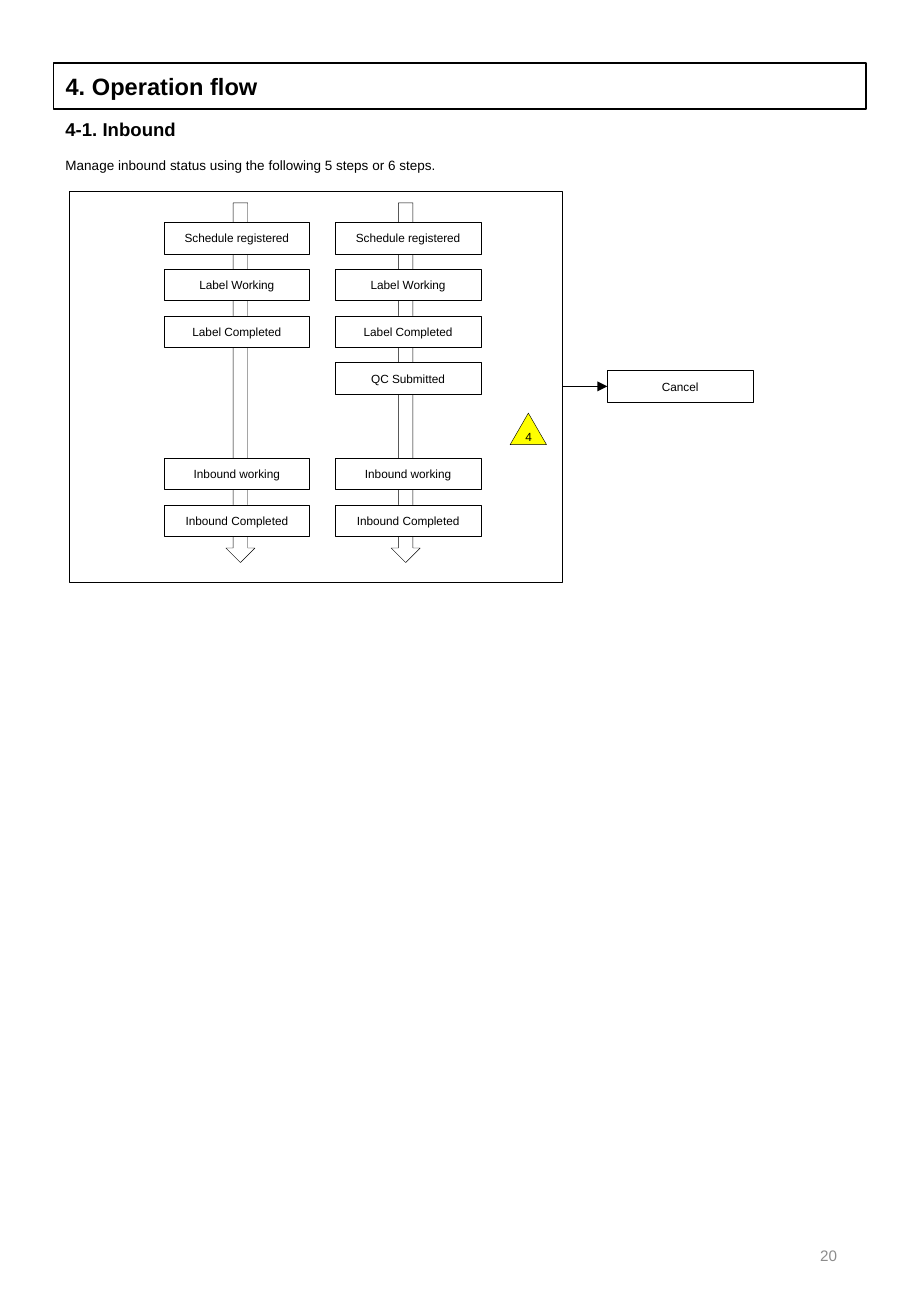
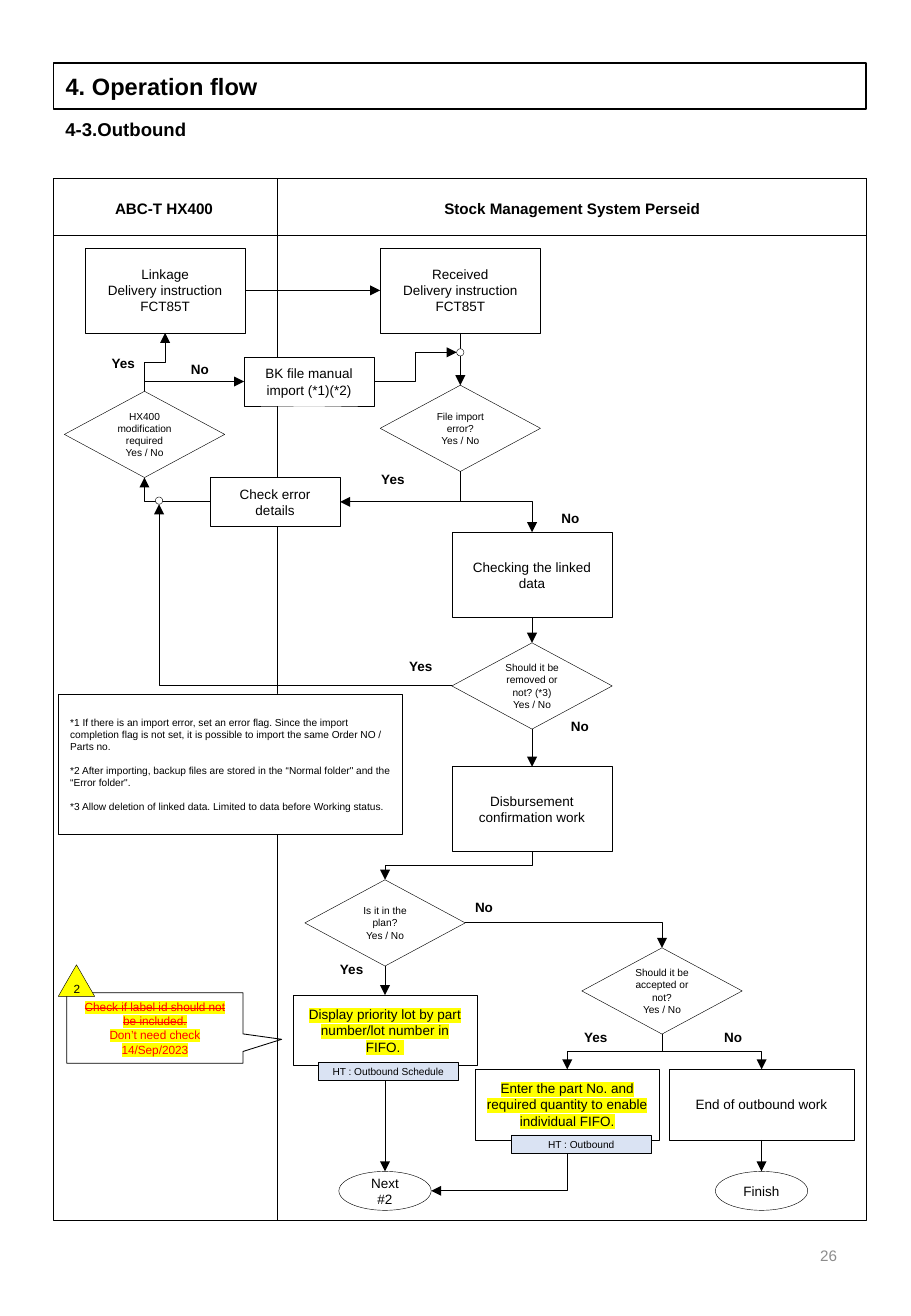
import lxml.etree
import pptx
import pptx.dml.color
import pptx.enum.shapes
import pptx.enum.text
import pptx.oxml.ns
import pptx.util

Inches = pptx.util.Inches
Pt = pptx.util.Pt
qn = pptx.oxml.ns.qn
KIND = pptx.enum.shapes.MSO_SHAPE
LINE = pptx.enum.shapes.MSO_CONNECTOR
ALIGN = pptx.enum.text.PP_ALIGN
ANCHOR = pptx.enum.text.MSO_ANCHOR

# Shared look
FONT = "Arial"
BLACK, WHITE, GREY, RED = "000000", "FFFFFF", "8C8C8C", "FF0000"
YELLOW, PALE_BLUE = "FFFF00", "DAE3F3"
LEFT, WIDTH = 0.44, 6.69
SIDES = ["top", "left", "bottom", "right"]


def colour(code):
    return pptx.dml.color.RGBColor.from_string(code)


def write(shape, text, size, color=BLACK, bold=False, align=ALIGN.CENTER,
          anchor=ANCHOR.MIDDLE, gap=0, highlight=None, struck=()):
    """Fill a shape with one paragraph per line of text."""
    frame = shape.text_frame
    frame.auto_size = pptx.enum.text.MSO_AUTO_SIZE.NONE
    frame.word_wrap = True
    frame.vertical_anchor = anchor
    lines = text.split("\n")
    for index, line in enumerate(lines):
        para = frame.add_paragraph() if index else frame.paragraphs[0]
        para.alignment = align
        para.space_after = Pt(gap if index < len(lines) - 1 else 0)
        span = para.add_run()
        span.text = line
        for name, value in {"name": FONT, "size": Pt(size), "bold": bold}.items():
            setattr(span.font, name, value)
        span.font.color.rgb = colour(color)
        properties = span.font._element
        if index in struck:
            properties.set("strike", "sngStrike")
        if highlight:
            mark = lxml.etree.Element(qn("a:highlight"))
            lxml.etree.SubElement(mark, qn("a:srgbClr"), val=highlight)
            properties.find(qn("a:solidFill")).addnext(mark)


def outline(shape, width):
    shape.line.color.rgb = colour(BLACK)
    shape.line.width = Pt(width)


def add_box(page, place, text="", size=8, kind=KIND.RECTANGLE, fill=None,
            width=0.25, **style):
    box = page.shapes.add_shape(kind, *map(Inches, place))
    box.shadow.inherit = False
    if fill:
        box.fill.solid()
        box.fill.fore_color.rgb = colour(fill)
    else:
        box.fill.background()
    outline(box, width)
    if text:
        write(box, text, size, **style)
    return box


def add_label(page, place, text, size=8, **style):
    write(page.shapes.add_textbox(*map(Inches, place)), text, size, **style)


def add_decision(page, left, top, text):
    return add_box(page, (left, top, 1.32, 0.71), text, 6, KIND.FLOWCHART_DECISION)


def add_marker(page, left, top, number):
    add_box(page, (left, top, 0.3, 0.26), number, 7, KIND.ISOSCELES_TRIANGLE, YELLOW)


def finish_line(line, arrow=True):
    outline(line, 0.5)
    properties = line._element.spPr
    if arrow:
        lxml.etree.SubElement(properties.find(qn("a:ln")), qn("a:tailEnd"), type="triangle")
    lxml.etree.SubElement(properties, qn("a:effectLst"))


def side_point(shape, side):
    across, down = {"top": (1, 0), "left": (0, 1), "bottom": (1, 2), "right": (2, 1)}[side]
    return shape.left + shape.width * across // 2, shape.top + shape.height * down // 2


def link(page, start, start_side, end, end_side):
    """Join two shapes with an arrow, straight where the ends are level."""
    x1, y1 = side_point(start, start_side)
    x2, y2 = side_point(end, end_side)
    straight = min(abs(x2 - x1), abs(y2 - y1)) < Inches(0.02)
    line = page.shapes.add_connector(LINE.STRAIGHT if straight else LINE.ELBOW, x1, y1, x2, y2)
    line.begin_connect(start, SIDES.index(start_side))
    line.end_connect(end, SIDES.index(end_side))
    # An ellipse has eight connection sites, so its sides count double
    if end.auto_shape_type == KIND.OVAL:
        joint = line._element.find(".//" + qn("a:endCxn"))
        joint.set("idx", str(2 * SIDES.index(end_side)))
    if not straight:
        vertical = [side in ("top", "bottom") for side in (start_side, end_side)]
        if vertical[0] != vertical[1]:
            line._element.spPr.find(qn("a:prstGeom")).set("prst", "bentConnector2")
        if vertical[0]:
            # Leaving vertically means a quarter turn about the centre
            long, wide = abs(y2 - y1), abs(x2 - x1)
            place = {"left": (x1 + x2 - long) // 2, "top": (y1 + y2 - wide) // 2,
                     "width": long, "height": wide}
            for name, value in place.items():
                setattr(line, name, value)
            turn = {"rot": "5400000", "flipH": str(int(y2 < y1)), "flipV": str(int(x2 > x1))}
            for name, value in turn.items():
                line._element.spPr.find(qn("a:xfrm")).set(name, value)
    finish_line(line)


def add_page(deck, heading, number):
    page = deck.slides.add_slide(deck.slide_layouts[5])
    title = page.shapes.title
    place = {"left": LEFT, "top": 0.52, "width": WIDTH, "height": 0.38}
    for name, value in place.items():
        setattr(title, name, Inches(value))
    outline(title, 1)
    write(title, "4. Operation flow", 14, bold=True, align=ALIGN.LEFT)
    add_label(page, (LEFT, 0.92, WIDTH, 0.29), heading, 11, bold=True,
              align=ALIGN.LEFT, anchor=ANCHOR.TOP)
    add_label(page, (5.3, 10.04, 1.69, 0.58), number, 9, color=GREY, align=ALIGN.RIGHT)
    return page


def build_inbound(deck):
    page = add_page(deck, "4-1. Inbound", "20")
    add_label(page, (LEFT, 1.24, WIDTH, 0.24),
              "Manage inbound status using the following 5 steps or 6 steps.",
              align=ALIGN.LEFT, anchor=ANCHOR.TOP)
    frame = add_box(page, (0.57, 1.57, 4.06, 3.22), fill=WHITE)

    # Two status columns, the second with a quality check
    early = ["Schedule registered", "Label Working", "Label Completed"]
    late = ["Inbound working", "Inbound Completed"]
    columns = [(1.35, 1.86, early), (2.76, 3.22, early + ["QC Submitted"])]
    for left, arrow_left, first_steps in columns:
        add_box(page, (arrow_left, 1.67, 0.24, 2.96), kind=KIND.DOWN_ARROW, fill=WHITE)
        for top, steps in ((1.83, first_steps), (3.77, late)):
            for index, step in enumerate(steps):
                add_box(page, (left, top + 0.385 * index, 1.2, 0.26), step, 7, fill=WHITE)

    cancel = add_box(page, (5, 3.05, 1.2, 0.26), "Cancel", 7)
    link(page, frame, "right", cancel, "left")
    add_marker(page, 4.2, 3.4, "4")


def build_outbound(deck):
    page = add_page(deck, "4-3.Outbound", "26")

    # Swimlanes
    top, bottom, divide = 1.47, 10.04, 2.28
    for height in (bottom - top, 0.47):
        add_box(page, (LEFT, top, WIDTH, height))
    add_label(page, (0.43, 1.48, 1.84, 0.47), "ABC-T HX400", 9, bold=True)
    add_label(page, (2.29, 1.48, 4.84, 0.47), "Stock Management System Perseid", 9, bold=True)
    divider = page.shapes.add_connector(
        LINE.STRAIGHT, *map(Inches, (divide, top, divide, bottom)))
    finish_line(divider, arrow=False)

    # Steps
    linkage = add_box(page, (0.7, 2.04, 1.32, 0.7), "Linkage\nDelivery instruction\nFCT85T")
    received = add_box(page, (3.13, 2.04, 1.32, 0.7), "Received\nDelivery instruction\nFCT85T")
    manual = add_box(page, (2.01, 2.94, 1.07, 0.4), "BK file manual import (*1)(*2)", fill=WHITE)
    details = add_box(page, (1.73, 3.93, 1.07, 0.4), "Check error details", fill=WHITE)
    checking = add_box(page, (3.72, 4.38, 1.32, 0.7), "Checking the linked data")
    disburse = add_box(page, (3.72, 6.31, 1.32, 0.7), "Disbursement confirmation work")
    display = add_box(page, (2.41, 8.19, 1.52, 0.58),
                      "Display priority lot by part number/lot number in FIFO. ", highlight=YELLOW)
    enter = add_box(page, (3.91, 8.8, 1.52, 0.58),
                    "Enter the part No. and required quantity to enable individual FIFO.",
                    highlight=YELLOW)
    end_work = add_box(page, (5.51, 8.8, 1.52, 0.58), "End of outbound work")
    following = add_box(page, (2.79, 9.64, 0.76, 0.32), "Next #2", kind=KIND.OVAL)
    finish = add_box(page, (5.89, 9.64, 0.76, 0.32), "Finish", kind=KIND.OVAL)

    # Decisions
    modify = add_decision(page, 0.53, 3.22, "HX400 modification required\nYes / No")
    import_error = add_decision(page, 3.13, 3.17, "File import error?\nYes / No")
    remove = add_decision(page, 3.72, 5.29, "Should it be removed or not? (*3)\nYes / No")
    plan = add_decision(page, 2.51, 7.24, "Is it in the plan?\nYes / No")
    accept = add_decision(page, 4.79, 7.8, "Should it be accepted or not?\nYes / No")

    # Arrows, with the small joints where two of them meet
    link(page, received, "bottom", import_error, "top")
    link(page, details, "left", modify, "bottom")
    import_joint, error_joint = [
        add_box(page, (left, joint_top, 0.06, 0.06), kind=KIND.OVAL, fill=WHITE)
        for left, joint_top in ((3.76, 2.87), (1.28, 4.09))]
    for ends in (
        (linkage, "right", received, "left"),
        (import_error, "bottom", details, "right"),
        (import_error, "bottom", checking, "top"),
        (modify, "top", manual, "left"),
        (modify, "top", linkage, "bottom"),
        (manual, "right", import_joint, "left"),
        (checking, "bottom", remove, "top"),
        (remove, "left", error_joint, "bottom"),
        (remove, "bottom", disburse, "top"),
        (disburse, "bottom", plan, "top"),
        (plan, "right", accept, "top"),
        (plan, "bottom", display, "top"),
        (accept, "bottom", enter, "top"),
        (accept, "bottom", end_work, "top"),
        (display, "bottom", following, "top"),
        (enter, "bottom", following, "right"),
        (end_work, "bottom", finish, "top"),
    ):
        link(page, *ends)

    # Answers beside the arrows
    answers = {
        "Yes": [(2.98, 3.83), (0.76, 2.87), (3.21, 5.37), (2.64, 7.86), (4.65, 8.42)],
        "No": [(4.44, 4.15), (1.39, 2.92), (4.52, 5.86), (3.73, 7.35), (5.78, 8.42)],
    }
    for answer, places in answers.items():
        for left, answer_top in places:
            add_label(page, (left, answer_top, 0.51, 0.23), answer, bold=True)

    # Notes, handheld tags and the review remark
    notes = [
        "*1 If there is an import error, set an error flag. Since the import completion flag "
        "is not set, it is possible to import the same Order NO / Parts no.",
        "*2 After importing, backup files are stored in the “Normal folder\" "
        "and the “Error folder\".",
        "*3 Allow deletion of linked data. Limited to data before Working status.",
    ]
    add_box(page, (0.48, 5.71, 2.83, 1.16), "\n".join(notes), 6, fill=WHITE,
            align=ALIGN.LEFT, gap=7)
    for left, tag_top, tag in ((2.62, 8.74, "HT : Outbound Schedule"),
                               (4.21, 9.34, "HT : Outbound")):
        add_box(page, (left, tag_top, 1.15, 0.15), tag, 6, fill=PALE_BLUE)
    remark = add_box(page, (0.55, 8.17, 1.45, 0.58),
                     "Check if label id should not be included.\nDon’t need check 14/Sep/2023",
                     7, KIND.RECTANGULAR_CALLOUT, width=0.5, color=RED,
                     highlight=YELLOW, struck=(0,))
    remark.adjustments[0], remark.adjustments[1] = 0.72, 0.16
    add_marker(page, 0.48, 7.94, "2")


def main():
    deck = pptx.Presentation()
    deck.slide_width, deck.slide_height = Inches(7.5), Inches(10.83)
    build_inbound(deck)
    build_outbound(deck)
    deck.save("out.pptx")


if __name__ == "__main__":
    main()
